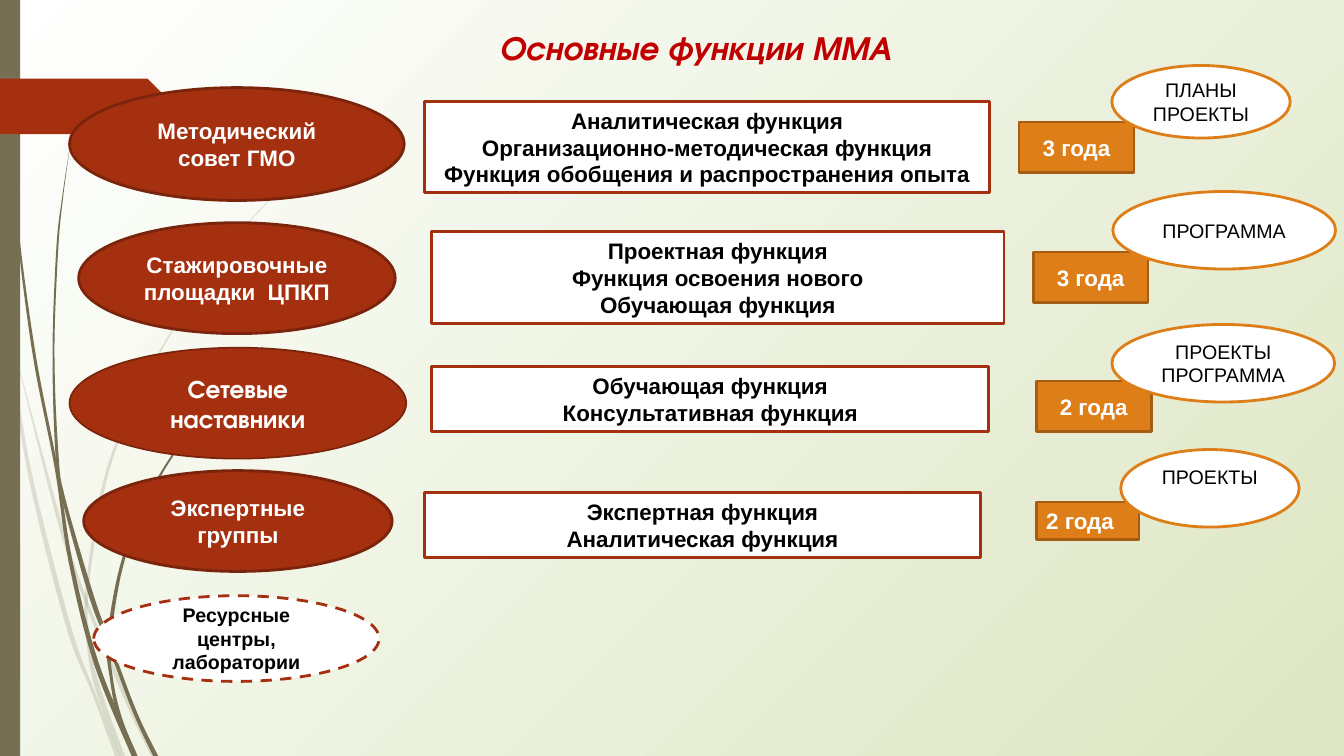
from dataclasses import dataclass

from lxml import etree
from pptx import Presentation
from pptx.dml.color import RGBColor
from pptx.enum.dml import MSO_LINE
from pptx.enum.shapes import MSO_SHAPE
from pptx.enum.text import MSO_ANCHOR, MSO_AUTO_SIZE, PP_ALIGN
from pptx.oxml.ns import qn
from pptx.util import Pt

RECTANGLE, OVAL, PENTAGON = MSO_SHAPE.RECTANGLE, MSO_SHAPE.OVAL, MSO_SHAPE.PENTAGON
LEFT, CENTER = PP_ALIGN.LEFT, PP_ALIGN.CENTER
TOP, MIDDLE = MSO_ANCHOR.TOP, MSO_ANCHOR.MIDDLE
TITLE_ONLY = 5


@dataclass(frozen=True)
class Theme:
    font: str = "Arial"
    display_font: str = "TeX Gyre Adventor"
    white: str = "FFFFFF"
    black: str = "000000"
    pale_green: str = "DDE6C3"
    olive: str = "766F54"
    red: str = "A53010"
    dark_red: str = "7A240C"
    orange: str = "DE7E18"
    dark_orange: str = "A45D12"
    title_red: str = "C00000"
    title_size: float = 24
    mentor_size: float = 18
    body_size: float = 16
    small_size: float = 14
    line_width: float = 2


THEME = Theme()

# Kinds of box: preset, fill, line colour, text format
BODY = (OVAL, THEME.red, THEME.dark_red, {"bold": True, "color": THEME.white})
FUNCTION = (RECTANGLE, THEME.white, THEME.red, {"bold": True, "color": THEME.black})
TERM = (RECTANGLE, THEME.orange, THEME.dark_orange, {"bold": True, "color": THEME.white})
PRODUCT = (OVAL, THEME.white, THEME.orange, {"size": THEME.small_size, "color": THEME.black})
RESOURCE = (OVAL, THEME.white, THEME.red,
            {"size": THEME.small_size, "bold": True, "color": THEME.black})

# Each box: kind, (left, top, width, height), lines of text, options
BOXES = [
    (BODY, (49.7, 248.4, 240.5, 79.2), ["Сетевые наставники"],
     {"line_width": 1.25, "size": THEME.mentor_size, "name": THEME.display_font}),
    (BODY, (56.2, 159.1, 226.1, 79.2), ["Стажировочные площадки  ЦПКП"], {}),
    (BODY, (59.8, 336.2, 220.3, 72), ["Экспертные группы"], {}),
    (BODY, (49.7, 62.6, 239, 80.6), ["Методический совет ГМО"], {}),
    (FUNCTION, (303.1, 72.7, 403.9, 64.8),
     ["Аналитическая функция", "Организационно-методическая функция",
      "Функция обобщения и распространения опыта"], {}),
    (FUNCTION, (308.2, 165.6, 409, 65.5),
     ["Проектная функция", "Функция освоения нового", "Обучающая функция"], {}),
    (FUNCTION, (308.2, 262.1, 398.2, 46.1),
     ["Обучающая функция", "Консультативная функция"], {}),
    (FUNCTION, (303.1, 352.1, 397.4, 46.1),
     ["Экспертная функция", "Аналитическая функция"], {}),
    (RESOURCE, (67, 425.5, 203.8, 61.2), ["Ресурсные центры, лаборатории"],
     {"dash": MSO_LINE.DASH}),
    (TERM, (727.9, 87.1, 82.1, 36), ["3 года"], {}),
    (TERM, (738, 180, 82.1, 36), ["3 года"], {}),
    (TERM, (740.2, 272.2, 82.1, 36), ["2 года"], {}),
    (TERM, (740.2, 358.6, 73.4, 26.6), ["2 года"], {"alignment": LEFT}),
    (PRODUCT, (794.2, 46.8, 127.4, 51.8), ["ПЛАНЫ", "ПРОЕКТЫ"], {}),
    (PRODUCT, (794.9, 136.8, 159.1, 55.4), ["ПРОГРАММА"], {}),
    (PRODUCT, (794.2, 231.8, 159.1, 55.4), ["ПРОЕКТЫ", "ПРОГРАММА"], {}),
    (PRODUCT, (800.6, 321.1, 127.4, 55.4), ["ПРОЕКТЫ"], {"margin_bottom": 19.6}),
]

# Grass stems: (centre x, y, width) from tip to root
PALE_STEMS = [
    [(0, 209, 3), (7.2, 249, 1.5), (21.2, 337.7, 2.9), (48.6, 446.4, 3.6),
     (67, 495.4, 2.5), (84, 540, 3.6)],
    [(10, 248.4, 0), (43.2, 375.1, 2.9), (62, 430.6, 2.5), (90, 499, 2.9), (109.8, 540, 3.6)],
    [(224.6, 110.5, 0.3), (193, 142.2, 0.7), (164.5, 176, 1), (114.5, 250.9, 1.4),
     (78.1, 332.3, 2.2), (62.3, 420.5, 2.2), (64.1, 465.1, 2.9), (71.6, 497, 4),
     (87.5, 540, 3.6)],
]
DARK_STEMS = [
    [(2.5, 0, 0.7), (5.4, 79.2, 0.8), (13, 167.8, 1.4), (24.8, 255.6, 2.2),
     (40.3, 335, 2.2), (50.4, 401, 2.9), (68.8, 473.8, 3.6), (96, 540, 4)],
    [(50.4, 101.5, 0), (45, 139, 0.7), (41, 176.4, 1.4), (38.2, 251.3, 1.4),
     (40.7, 324.7, 2.2), (45.4, 356, 2.5), (65.2, 425.5, 3.6), (78, 460, 3),
     (96.5, 509, 2.9), (111.2, 540, 3.6)],
    [(187.6, 247.7, 0.3), (166.3, 268.9, 0.7), (147.2, 292, 1), (113, 342, 1.8),
     (88.9, 397.1, 2.2), (78.1, 455, 2.9), (79.6, 484.6, 2.2), (85.7, 513, 3),
     (96.8, 540, 3)],
]


def rgb(color):
    return RGBColor.from_string(color)


def points(box):
    return [Pt(value) for value in box]


def apply_format(target, values):
    for name, value in values.items():
        setattr(target, name, value)


def format_font(font, size=THEME.body_size, name=THEME.font, bold=False, italic=False,
                color=THEME.black):
    apply_format(font, {"size": Pt(size), "name": name, "bold": bold, "italic": italic})
    font.color.rgb = rgb(color)


def paint(shape, fill, line=None):
    shape.shadow.inherit = False
    shape.fill.solid()
    shape.fill.fore_color.rgb = rgb(fill)
    if line:
        shape.line.color.rgb = rgb(line)
    else:
        shape.line.fill.background()


def write_lines(shape, lines, alignment=CENTER, anchor=MIDDLE, margin_bottom=3.6, **font):
    frame = shape.text_frame
    apply_format(frame, {"word_wrap": True, "vertical_anchor": anchor,
                         "auto_size": MSO_AUTO_SIZE.NONE, "margin_bottom": Pt(margin_bottom)})
    for index, line in enumerate(lines):
        paragraph = frame.add_paragraph() if index else frame.paragraphs[0]
        paragraph.alignment = alignment
        run = paragraph.add_run()
        run.text = line
        format_font(run.font, **font)


def add_box(slide, kind, box, lines, line_width=THEME.line_width, dash=None, **options):
    preset, fill, line, font = kind
    shape = slide.shapes.add_shape(preset, *points(box))
    paint(shape, fill, line)
    apply_format(shape.line, {"width": Pt(line_width), "dash_style": dash})
    write_lines(shape, lines, **{**font, **options})


def smooth(knots, steps=8):
    """Pass a Catmull-Rom curve through the knots."""
    padded = [knots[0], *knots, knots[-1]]
    curve = []
    for a, b, c, d in zip(padded, padded[1:], padded[2:], padded[3:]):
        for step in range(steps):
            t = step / steps
            curve.append([q + t * (r - p) / 2 + t ** 2 * (2 * p - 5 * q + 4 * r - s) / 2
                          + t ** 3 * (3 * q - p - 3 * r + s) / 2
                          for p, q, r, s in zip(a, b, c, d)])
    return curve + [knots[-1]]


def add_stem(slide, knots, opacity=100):
    curve = smooth(knots)
    left = [points((max(0, x - width / 2), y)) for x, y, width in curve]
    right = [points((x + width / 2, y)) for x, y, width in curve]
    outline = left + right[::-1]
    builder = slide.shapes.build_freeform(*outline[0])
    builder.add_line_segments(outline[1:], close=True)
    stem = builder.convert_to_shape()
    paint(stem, THEME.olive)
    if opacity < 100:
        color = stem.fill._xPr.find(qn("a:solidFill"))[0]
        etree.SubElement(color, qn("a:alpha"), val=str(opacity * 1000))


def set_background(slide):
    fill = slide.background.fill
    fill.gradient()
    for stop, color in zip(fill.gradient_stops, (THEME.white, THEME.pale_green)):
        stop.color.rgb = rgb(color)
    # Radial gradient that starts in the top left corner
    gradient = slide.background._cSld.find(".//" + qn("a:gradFill"))
    gradient.remove(gradient.find(qn("a:lin")))
    radial = etree.SubElement(gradient, qn("a:path"), path="circle")
    etree.SubElement(radial, qn("a:fillToRect"), r="100000", b="100000")


def add_decoration(slide):
    for knots in PALE_STEMS:
        add_stem(slide, knots, opacity=20)
    for knots in DARK_STEMS:
        add_stem(slide, knots)
    for preset, box, color in ((RECTANGLE, (0, 0, 14.4, 540), THEME.olive),
                               (PENTAGON, (0, 56.2, 125.3, 39.6), THEME.red)):
        paint(slide.shapes.add_shape(preset, *points(box)), color)


def set_title(slide, text):
    title = slide.shapes.title
    position = zip(("left", "top", "width", "height"), points((145.4, 15.8, 702, 43.2)))
    apply_format(title, dict(position))
    write_lines(title, [text], anchor=TOP, size=THEME.title_size, name=THEME.display_font,
                bold=True, italic=True, color=THEME.title_red)


def main():
    presentation = Presentation()
    apply_format(presentation, {"slide_width": Pt(960), "slide_height": Pt(540)})
    slide = presentation.slides.add_slide(presentation.slide_layouts[TITLE_ONLY])
    set_background(slide)
    add_decoration(slide)
    set_title(slide, "Основные функции ММА")
    for kind, box, lines, options in BOXES:
        add_box(slide, kind, box, lines, **options)
    presentation.save("out.pptx")


if __name__ == "__main__":
    main()
